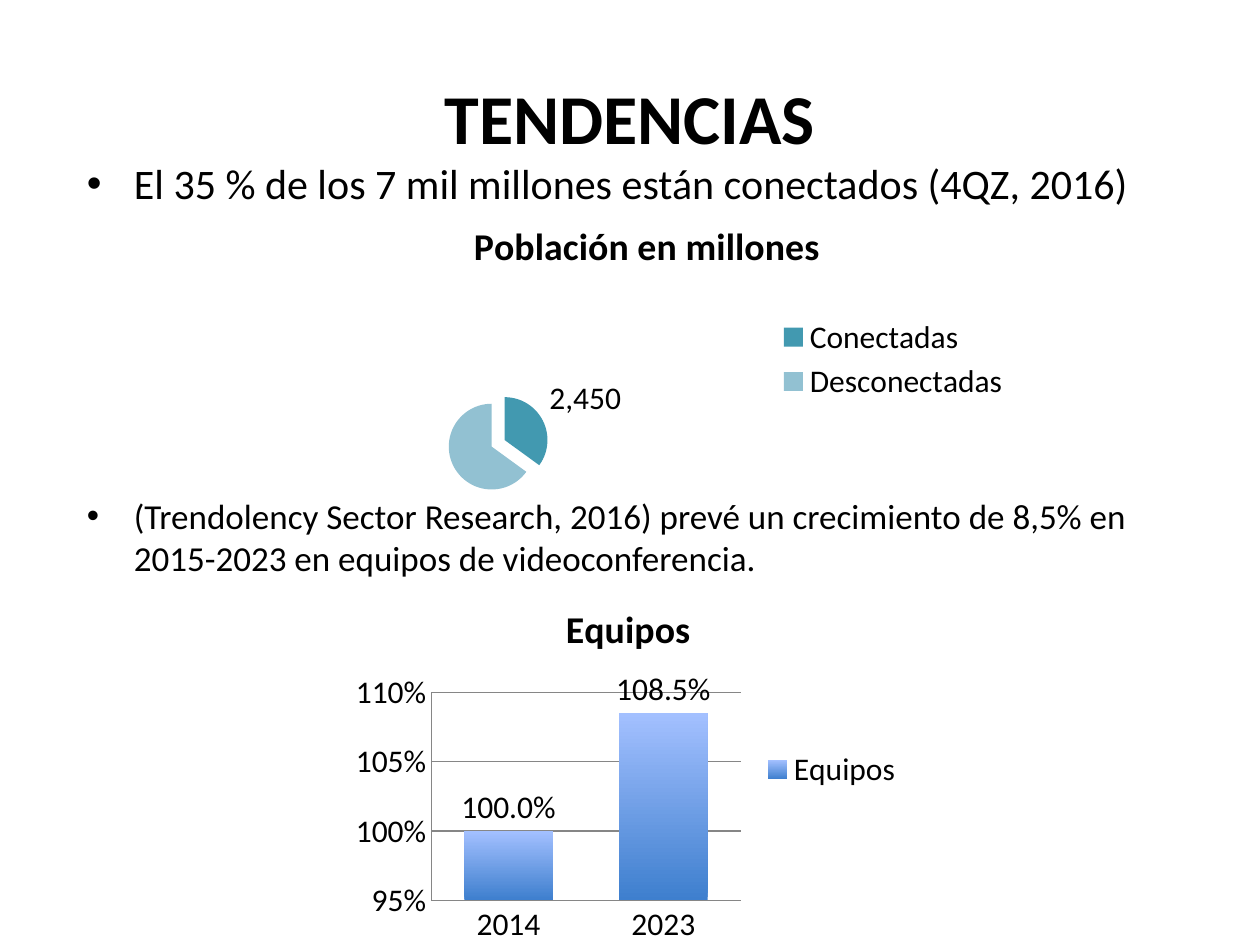
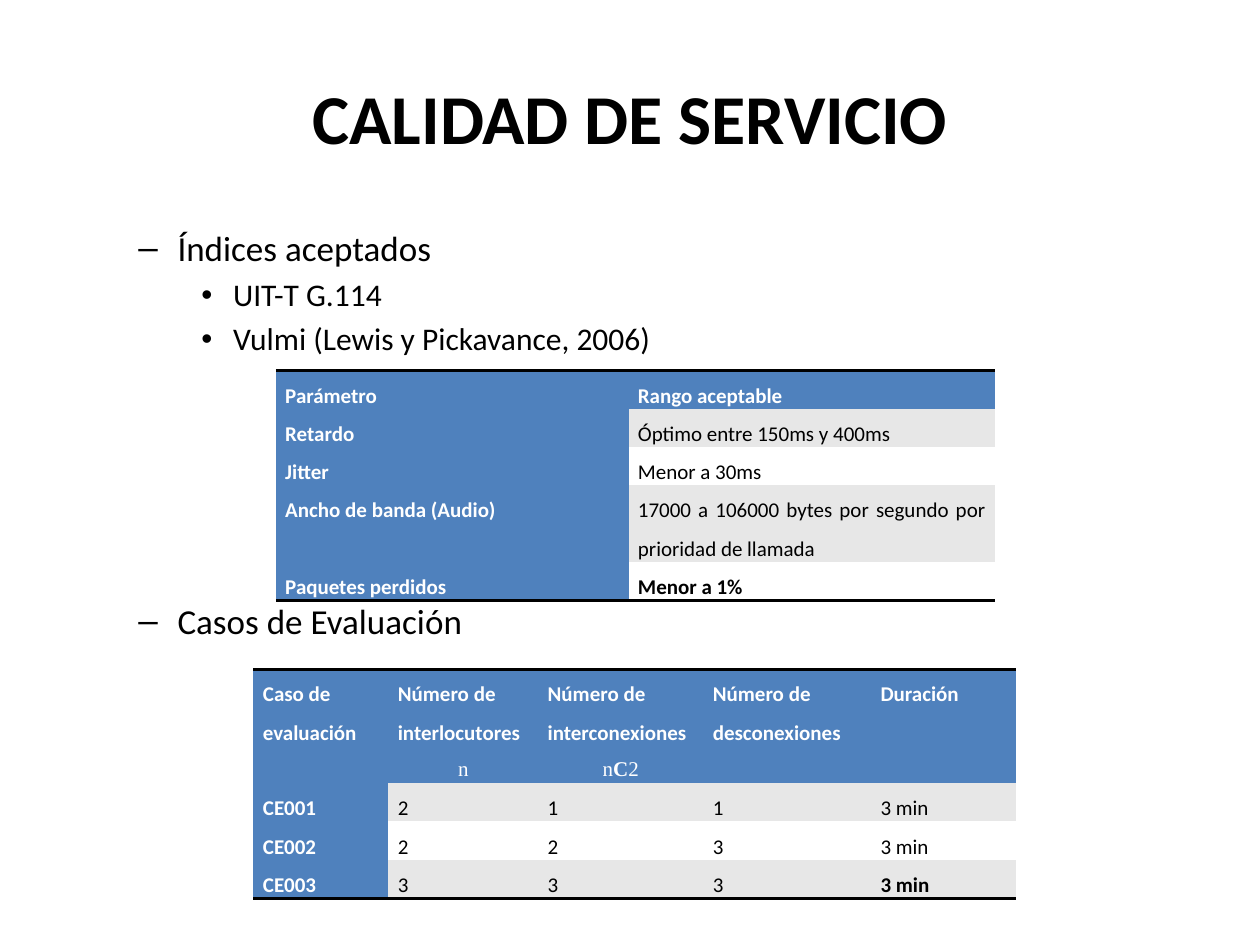
from dataclasses import dataclass, field
from typing import Optional

from lxml import etree
from pptx import Presentation
from pptx.chart.data import CategoryChartData
from pptx.dml.color import RGBColor
from pptx.enum.chart import XL_CHART_TYPE, XL_LABEL_POSITION, XL_LEGEND_POSITION, XL_TICK_MARK
from pptx.enum.text import MSO_ANCHOR, PP_ALIGN
from pptx.oxml.ns import qn
from pptx.util import Cm, Pt

PIE, COLUMNS = XL_CHART_TYPE.PIE, XL_CHART_TYPE.COLUMN_CLUSTERED
OUTSIDE_END = XL_LABEL_POSITION.OUTSIDE_END
LEGEND_RIGHT = XL_LEGEND_POSITION.RIGHT
NO_TICK = XL_TICK_MARK.NONE
LEFT, CENTER, JUSTIFY = PP_ALIGN.LEFT, PP_ALIGN.CENTER, PP_ALIGN.JUSTIFY
MIDDLE = MSO_ANCHOR.MIDDLE

COLORS = {
    "text": "000000", "white": "FFFFFF", "header": "4F81BD", "band": "E7E7E7",
    "connected": "4299B0", "disconnected": "92C1D2",
    "bar_top": "A3C0FF", "bar_bottom": "3E7FCE", "axis": "868686",
}
FONT, SYMBOL_FONT = "Calibri", "Times New Roman"


@dataclass(frozen=True)
class Box:
    """Position and size in centimetres."""
    left: float
    top: float
    width: float
    height: float

    def lengths(self) -> list:
        return [Cm(value) for value in (self.left, self.top, self.width, self.height)]


@dataclass(frozen=True)
class Bullet:
    text: str
    size: int
    mark: str = "•"
    margin: float = 0.95
    hanging: float = 0.95


@dataclass(frozen=True)
class ChartPlan:
    kind: int
    title: str
    box: Box
    categories: tuple
    values: tuple
    number_format: str
    plot: tuple  # x, y, w, h as fractions of the chart
    legend: tuple  # x, y as fractions of the chart


@dataclass(frozen=True)
class TablePlan:
    left: float
    top: float
    columns: tuple
    heights: tuple
    rows: tuple
    alignment: int
    symbols: dict = field(default_factory=dict)  # header column -> (text, bold) runs


TITLE_BOX = Box(1.27, 0.76, 22.86, 3.18)

POPULATION = ChartPlan(
    PIE, "Población en millones", Box(5.54, 4.01, 15.01, 6.32),
    ("Conectadas", "Desconectadas"), (2450, 4550), "#,##0",
    (0.23, 0.62, 0.14, 0.32), (0.67, 0.36))
EQUIPMENT = ChartPlan(
    COLUMNS, "Equipos", Box(6.99, 11.71, 11.35, 7.49),
    ("2014", "2023"), (1, 1.085), "0.0%",
    (0.15, 0.3, 0.55, 0.56), (0.73, 0.44))

ACCEPTED_RANGES = TablePlan(
    5.56, 7.47, (7.11, 7.39), (0.77, 0.77, 0.77, 1.55, 0.77),
    (("Parámetro", "Rango aceptable"),
     ("Retardo", "Óptimo entre 150ms y 400ms"),
     ("Jitter", "Menor a 30ms"),
     ("Ancho de banda (Audio)", "17000 a 106000 bytes por segundo por prioridad de llamada"),
     ("Paquetes perdidos", "Menor a 1%")),
    JUSTIFY)
EVALUATION_CASES = TablePlan(
    5.11, 13.49, (2.72, 3.02, 3.33, 3.38, 2.92), (2.26, 0.78, 0.78, 0.78),
    (("Caso de evaluación", "Número de interlocutores", "Número de interconexiones",
      "Número de desconexiones", "Duración"),
     ("CE001", "2", "1", "1", "3 min"),
     ("CE002", "2", "2", "3", "3 min"),
     ("CE003", "3", "3", "3", "3 min")),
    LEFT,
    {1: (("n", False),), 2: (("n", False), ("C", True), ("2", False))})


def rgb(name: str) -> RGBColor:
    return RGBColor.from_string(COLORS[name])


def add_run(paragraph, text: str, size: float, color: str = "text",
            bold: bool = False, font: str = FONT) -> None:
    run = paragraph.add_run()
    run.text = text
    run.font.name, run.font.size, run.font.bold = font, Pt(size), bold
    run.font.color.rgb = rgb(color)


def add_title(slide, text: str) -> None:
    frame = slide.shapes.add_textbox(*TITLE_BOX.lengths()).text_frame
    frame.word_wrap = True
    frame.vertical_anchor = MIDDLE
    frame.paragraphs[0].alignment = CENTER
    add_run(frame.paragraphs[0], text, 40, bold=True)


def add_bullets(slide, box: Box, bullets: tuple) -> None:
    frame = slide.shapes.add_textbox(*box.lengths()).text_frame
    frame.word_wrap = True
    for index, bullet in enumerate(bullets):
        paragraph = frame.add_paragraph() if index else frame.paragraphs[0]
        paragraph.space_before = Pt(bullet.size * 0.2)
        properties = paragraph._p.get_or_add_pPr()
        properties.set("marL", str(Cm(bullet.margin)))
        properties.set("indent", str(-Cm(bullet.hanging)))
        etree.SubElement(properties, qn("a:buFont"), typeface="Arial")
        etree.SubElement(properties, qn("a:buChar"), char=bullet.mark)
        add_run(paragraph, bullet.text, bullet.size)


def set_layout(parent, index: int, fractions: tuple) -> None:
    """Fix the place of a plot area or legend inside its chart."""
    for previous in parent.findall(qn("c:layout")):
        parent.remove(previous)
    layout = etree.Element(qn("c:layout"))
    manual = etree.SubElement(layout, qn("c:manualLayout"))
    if len(fractions) == 4:
        etree.SubElement(manual, qn("c:layoutTarget"), val="inner")
    for axis in "xy":
        etree.SubElement(manual, qn(f"c:{axis}Mode"), val="edge")
    for name, value in zip("xywh", fractions):
        etree.SubElement(manual, qn(f"c:{name}"), val=str(value))
    parent.insert(index, layout)


def add_chart(slide, plan: ChartPlan):
    data = CategoryChartData(number_format=plan.number_format)
    data.categories = plan.categories
    data.add_series(plan.title, plan.values)
    chart = slide.shapes.add_chart(plan.kind, *plan.box.lengths(), data).chart
    chart.font.name, chart.font.size = FONT, Pt(18)
    chart.font.color.rgb = rgb("text")
    chart.has_title = True
    chart.chart_title.include_in_layout = False
    add_run(chart.chart_title.text_frame.paragraphs[0], plan.title, 21.6, bold=True)
    chart.has_legend = True
    chart.legend.position = LEGEND_RIGHT
    chart.legend.include_in_layout = False
    plot_area = chart._chartSpace.chart.plotArea
    set_layout(plot_area, 0, plan.plot)
    set_layout(chart.legend._element, 1, plan.legend)
    return chart


def add_population_chart(slide) -> None:
    chart = add_chart(slide, POPULATION)
    chart.plots[0].vary_by_categories = True
    series = chart.plots[0].series[0]
    for index, color in enumerate(("connected", "disconnected")):
        fill = series.points[index].format.fill
        fill.solid()
        fill.fore_color.rgb = rgb(color)
    explosion = etree.Element(qn("c:explosion"), val="17")
    series._element.find(qn("c:dPt")).addprevious(explosion)
    series.data_labels.show_value = False
    series.points[0].data_label.position = OUTSIDE_END


def add_equipment_chart(slide) -> None:
    chart = add_chart(slide, EQUIPMENT)
    plot = chart.plots[0]
    plot.vary_by_categories = False
    plot.gap_width = 75
    fill = plot.series[0].format.fill
    fill.gradient()
    fill.gradient_angle = 90
    for stop, color in zip(fill.gradient_stops, ("bar_bottom", "bar_top")):
        stop.color.rgb = rgb(color)
    labels = plot.series[0].data_labels
    labels.show_value = True
    labels.position = OUTSIDE_END
    labels.number_format, labels.number_format_is_linked = "0.0%", False
    value_axis = chart.value_axis
    value_axis.minimum_scale, value_axis.maximum_scale = 0.95, 1.1
    value_axis.major_unit = 0.05
    value_axis.has_major_gridlines = True
    value_axis.tick_labels.number_format = "0%"
    value_axis.tick_labels.number_format_is_linked = False
    for axis in (chart.category_axis, value_axis):
        axis.major_tick_mark = axis.minor_tick_mark = NO_TICK
    for part in (chart.category_axis, value_axis, value_axis.major_gridlines):
        part.format.line.color.rgb = rgb("axis")
        part.format.line.width = Pt(0.75)


def set_borders(cell, ruled_sides: str) -> None:
    """Rule the named sides (T, B) in black and clear the others."""
    properties = cell._tc.get_or_add_tcPr()
    for side in "LRTB":
        line = etree.SubElement(properties, qn(f"a:ln{side}"), w=str(Pt(2)))
        if side in ruled_sides:
            solid = etree.SubElement(line, qn("a:solidFill"))
            etree.SubElement(solid, qn("a:srgbClr"), val=COLORS["text"])
        else:
            etree.SubElement(line, qn("a:noFill"))


def add_table(slide, plan: TablePlan) -> None:
    box = Box(plan.left, plan.top, sum(plan.columns), sum(plan.heights))
    last_row, last_column = len(plan.rows) - 1, len(plan.columns) - 1
    table = slide.shapes.add_table(last_row + 1, last_column + 1, *box.lengths()).table
    table.first_row = table.horz_banding = False
    for column, width in zip(table.columns, plan.columns):
        column.width = Cm(width)
    for row_index, texts in enumerate(plan.rows):
        table.rows[row_index].height = Cm(plan.heights[row_index])
        for column_index, text in enumerate(texts):
            heading = row_index == 0 or column_index == 0
            final = (row_index, column_index) == (last_row, last_column)
            sides = "TB" if row_index == 0 else "B" if row_index == last_row else ""
            background = "header" if heading else "band" if row_index % 2 else "white"
            symbols = plan.symbols.get(column_index) if row_index == 0 else None
            fill_cell(table.cell(row_index, column_index), text, plan.alignment,
                      background, heading or final, sides, symbols)


def fill_cell(cell, text: str, alignment: int, background: str, bold: bool,
              sides: str, symbols: Optional[tuple]) -> None:
    set_borders(cell, sides)
    cell.fill.solid()
    cell.fill.fore_color.rgb = rgb(background)
    cell.margin_left = cell.margin_right = Cm(0.19)
    cell.margin_top = cell.margin_bottom = Cm(0)
    color = "white" if background == "header" else "text"
    paragraph = cell.text_frame.paragraphs[0]
    paragraph.alignment, paragraph.line_spacing = alignment, 1.5
    add_run(paragraph, text, 12, color, bold)
    if symbols:
        paragraph = cell.text_frame.add_paragraph()
        paragraph.alignment, paragraph.line_spacing = CENTER, 1.5
        for symbol, symbol_bold in symbols:
            add_run(paragraph, symbol, 12, color, symbol_bold, SYMBOL_FONT)


def section(text: str) -> Bullet:
    return Bullet(text, 20, "–", 2.06, 0.79)


def item(text: str) -> Bullet:
    return Bullet(text, 18, "•", 3.18, 0.64)


def build_trends(slide) -> None:
    add_title(slide, "TENDENCIAS")
    add_bullets(slide, Box(1.5, 3.05, 22.86, 1.3), (
        Bullet("El 35 % de los 7 mil millones están conectados (4QZ, 2016)", 24),))
    add_bullets(slide, Box(1.5, 9.85, 22.86, 2.1), (
        Bullet("(Trendolency Sector Research, 2016) prevé un crecimiento de 8,5% en "
               "2015-2023 en equipos de videoconferencia.", 20),))
    add_population_chart(slide)
    add_equipment_chart(slide)


def build_service_quality(slide) -> None:
    add_title(slide, "CALIDAD DE SERVICIO")
    add_bullets(slide, Box(1.27, 4.45, 22.86, 3), (
        section("Índices aceptados"),
        item("UIT-T G.114"),
        item("Vulmi (Lewis y Pickavance, 2006)")))
    add_bullets(slide, Box(1.27, 11.97, 22.86, 1.2), (section("Casos de Evaluación"),))
    add_table(slide, EVALUATION_CASES)
    add_table(slide, ACCEPTED_RANGES)


def main() -> None:
    presentation = Presentation()
    presentation.slide_width, presentation.slide_height = Cm(25.4), Cm(19.05)
    blank = presentation.slide_layouts[6]
    for build in (build_trends, build_service_quality):
        build(presentation.slides.add_slide(blank))
    presentation.save("out.pptx")


if __name__ == "__main__":
    main()
